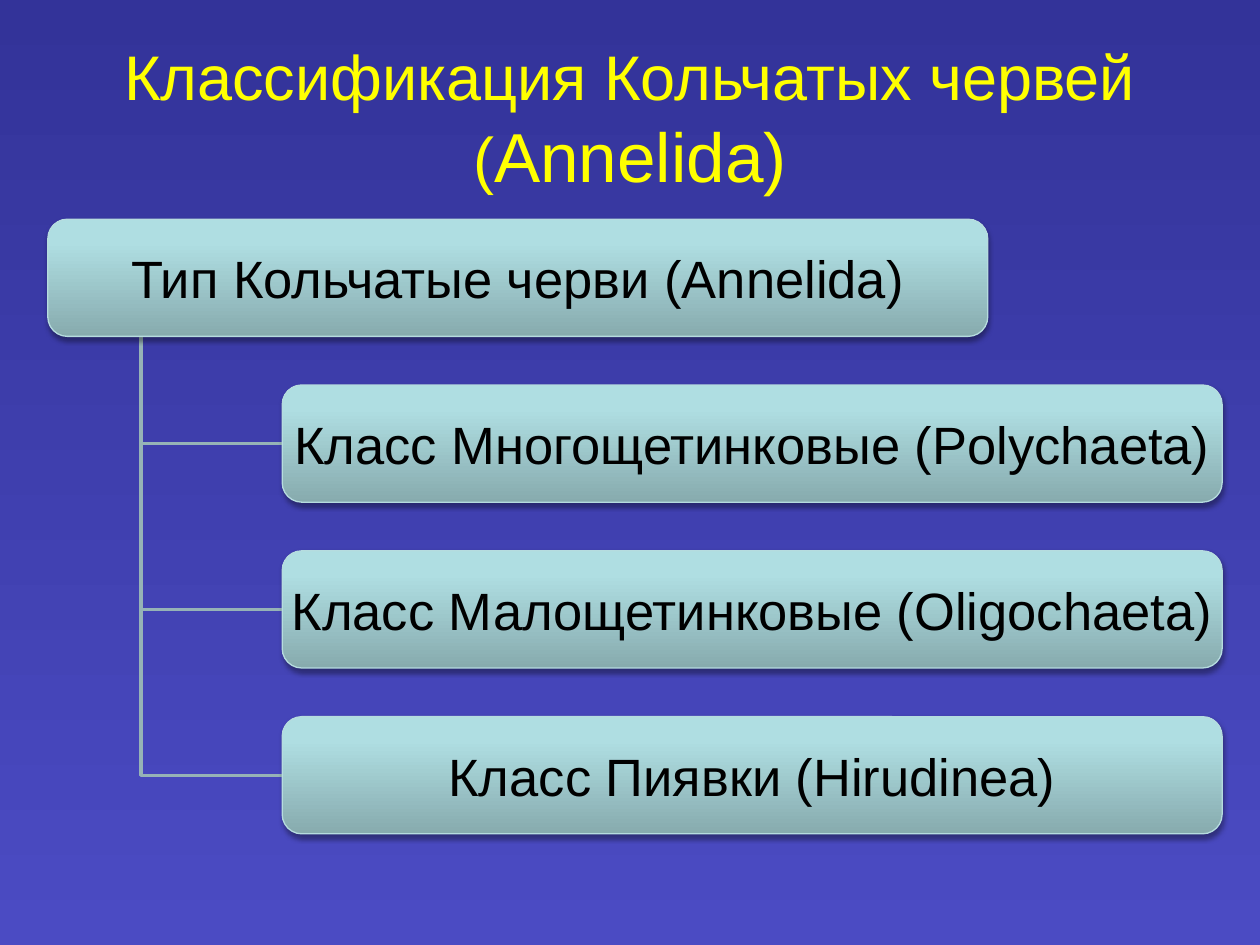
from copy import deepcopy

from lxml import etree
from pptx import Presentation
from pptx import util as u
from pptx.dml.color import RGBColor
from pptx.enum import shapes, text
from pptx.oxml import ns

COLORS = {
    "back_top": "333399", "back_bottom": "4B4BC3", "title": "FFFF00",
    "box_dark": "87ABAE", "box_mid": "AFDEE2", "box_light": "AFE0E4",
    "edge": "B6DCDF", "branch": "96B3B6", "label": "000000", "shadow": "000000",
}


def rgb(name):
    return RGBColor.from_string(COLORS[name])


def set_gradient(fill, stops, angle):
    """Fill with (position, colour name) stops; angle is counter-clockwise."""
    fill.gradient()
    fill.gradient_angle = angle
    stop_list = fill.gradient_stops[0]._gs.getparent()
    while len(stop_list) < len(stops):
        stop_list.append(deepcopy(stop_list[-1]))
    for stop, (position, name) in zip(fill.gradient_stops, stops):
        stop.position = position
        stop.color.rgb = rgb(name)


deck = Presentation()
deck.slide_width, deck.slide_height = u.Inches(10), u.Inches(7.5)
page = deck.slides.add_slide(deck.slide_layouts[6])
set_gradient(page.background.fill, [(0, "back_top"), (1, "back_bottom")], 270)

# Title
title = page.shapes.add_textbox(u.Inches(0.5), u.Inches(0.3), u.Inches(9), u.Inches(1.25))
title.text_frame.word_wrap = True
title.text_frame.vertical_anchor = text.MSO_ANCHOR.MIDDLE
para = title.text_frame.paragraphs[0]
para.alignment = text.PP_ALIGN.CENTER
for words, size in [("Классификация Кольчатых червей (", 36), ("Annelida)", 39.6)]:
    span = para.add_run()
    span.text = words
    span.font.name, span.font.size = "Arial", u.Pt(size)
    span.font.color.rgb = rgb("title")

# Tree layout: the phylum on top, its classes indented below
labels = [
    "Тип Кольчатые черви (Annelida)",
    "Класс Многощетинковые (Polychaeta)",
    "Класс Малощетинковые (Oligochaeta)",
    "Класс Пиявки (Hirudinea)",
]
root_left, class_left, trunk_x = 0.38, 2.24, 1.12
first_top, row_step = 1.74, 1.316
box_width, box_height = 7.46, 0.93
tops = [first_top + row * row_step for row in range(len(labels))]

# Branches from the phylum to each class, longest at the back
for top in reversed(tops[1:]):
    middle = top + box_height / 2
    builder = page.shapes.build_freeform(
        u.Inches(trunk_x), u.Inches(first_top + box_height))
    builder.add_line_segments(
        [(u.Inches(trunk_x), u.Inches(middle)), (u.Inches(class_left), u.Inches(middle))],
        close=False)
    branch = builder.convert_to_shape()
    branch.fill.background()
    branch.line.color.rgb = rgb("branch")
    branch.line.width = u.Pt(2)
    branch.shadow.inherit = False

# Boxes
for row, (label, top) in enumerate(zip(labels, tops)):
    left = class_left if row else root_left
    box = page.shapes.add_shape(
        shapes.MSO_SHAPE.ROUNDED_RECTANGLE,
        u.Inches(left), u.Inches(top), u.Inches(box_width), u.Inches(box_height))
    set_gradient(box.fill, [(0, "box_dark"), (0.8, "box_mid"), (1, "box_light")], 90)
    box.line.color.rgb = rgb("edge")
    box.line.width = u.Pt(0.75)

    # Soft shadow straight below
    box.shadow.inherit = False
    effects = box._element.spPr.find(ns.qn("a:effectLst"))
    shadow = etree.SubElement(
        effects, ns.qn("a:outerShdw"), blurRad=str(u.Pt(3.1)), dist=str(u.Pt(1.8)),
        dir="5400000", rotWithShape="0")
    tint = etree.SubElement(shadow, ns.qn("a:srgbClr"), val=COLORS["shadow"])
    etree.SubElement(tint, ns.qn("a:alpha"), val="35000")

    frame = box.text_frame
    frame.text = label
    frame.word_wrap = True
    frame.vertical_anchor = text.MSO_ANCHOR.MIDDLE
    frame.margin_left = frame.margin_right = u.Inches(0.02)
    frame.margin_top = frame.margin_bottom = u.Inches(0.02)
    para = frame.paragraphs[0]
    para.alignment = text.PP_ALIGN.CENTER
    span = para.runs[0]
    span.font.name, span.font.size = "Arial", u.Pt(30)
    span.font.color.rgb = rgb("label")

deck.save("out.pptx")
